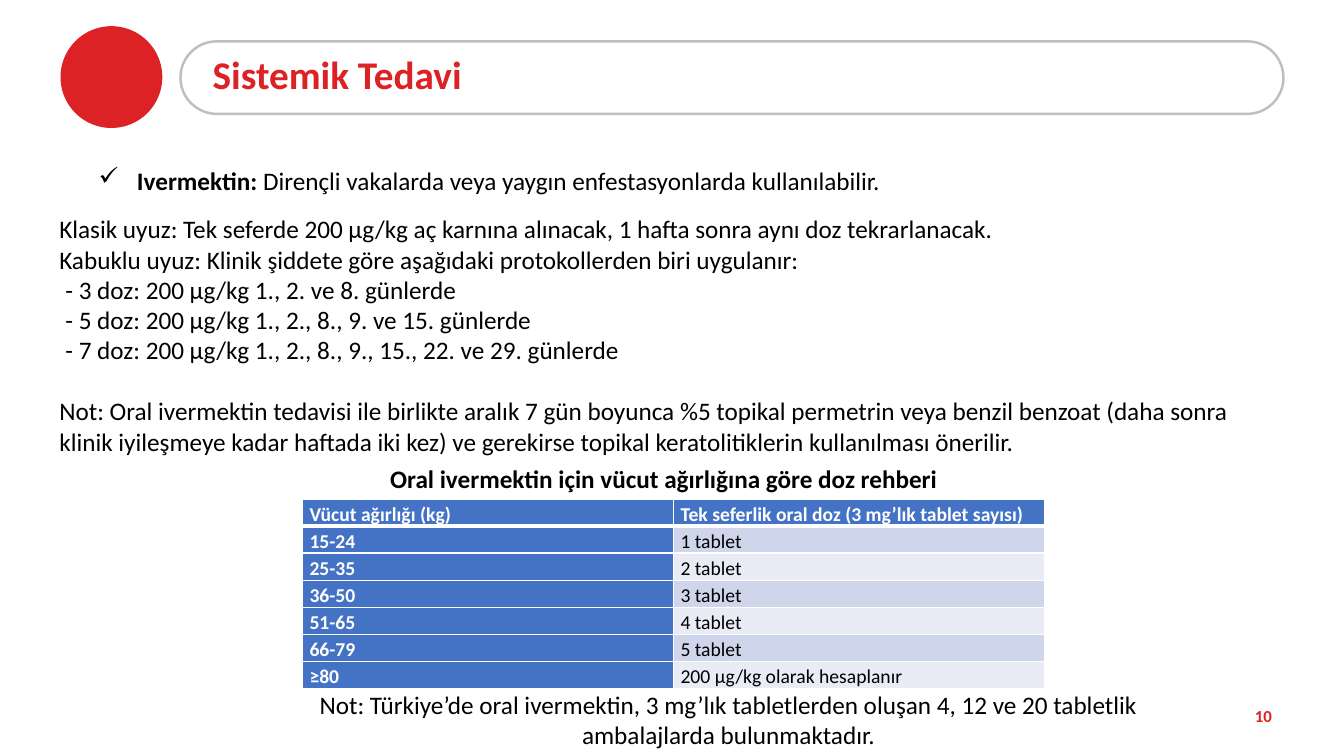
"""Builds the slide on systemic scabies treatment with its ivermectin dose table."""
from dataclasses import dataclass

from lxml import etree
from pptx import Presentation
from pptx.dml.color import RGBColor
from pptx.enum import shapes, text
from pptx.oxml import ns
from pptx.util import Inches, Pt


@dataclass(frozen=True)
class Theme:
    """Holds the font, colours and type sizes."""
    font: str = "Calibri"
    red: str = "DC2225"
    grey: str = "BFBFBF"
    black: str = "000000"
    white: str = "FFFFFF"
    blue: str = "4472C4"
    bands: tuple = ("CFD5EA", "E9EBF5")
    title: int = 28
    body: int = 18
    cell: int = 14
    number: int = 12


THEME = Theme()

REGIMENS = [
    ("Klasik uyuz: Tek seferde 200 µg/kg aç karnına alınacak, 1 hafta sonra aynı doz tekrarlanacak.", 0, 0),
    ("Kabuklu uyuz: Klinik şiddete göre aşağıdaki protokollerden biri uygulanır:", 0, 0),
    ("- 3 doz: 200 µg/kg 1., 2. ve 8. günlerde", 0.06, 0),
    ("- 5 doz: 200 µg/kg 1., 2., 8., 9. ve 15. günlerde", 0.06, 0),
    ("- 7 doz: 200 µg/kg 1., 2., 8., 9., 15., 22. ve 29. günlerde", 0.06, 0),
    ("Not: Oral ivermektin tedavisi ile birlikte aralık 7 gün boyunca %5 topikal permetrin veya "
     "benzil benzoat (daha sonra klinik iyileşmeye kadar haftada iki kez) ve gerekirse topikal "
     "keratolitiklerin kullanılması önerilir.", 0, 22),
]

DOSES = [
    ("Vücut ağırlığı (kg)", "Tek seferlik oral doz (3 mg’lık tablet sayısı)"),
    ("15-24", "1 tablet"),
    ("25-35", "2 tablet"),
    ("36-50", "3 tablet"),
    ("51-65", "4 tablet"),
    ("66-79", "5 tablet"),
    ("≥80", "200 µg/kg olarak hesaplanır"),
]


def rgb(colour):
    """Turns a hex string into a colour."""
    return RGBColor.from_string(colour)


def add_run(paragraph, words, size=THEME.body, colour=THEME.black, bold=False):
    """Adds one formatted run to a paragraph."""
    run = paragraph.add_run()
    run.text = words
    run.font.name = THEME.font
    run.font.size = Pt(size)
    run.font.bold = bold
    run.font.color.rgb = rgb(colour)


def add_frame(slide, left, top, width, height, wrap=True):
    """Adds a text box and returns its text frame."""
    box = slide.shapes.add_textbox(Inches(left), Inches(top), Inches(width), Inches(height))
    box.text_frame.word_wrap = wrap
    return box.text_frame


def add_outline(slide, kind, left, top, width, height):
    """Adds a preset shape without shadow."""
    outline = slide.shapes.add_shape(kind, Inches(left), Inches(top), Inches(width), Inches(height))
    outline.shadow.inherit = False
    return outline


def add_header(slide):
    """Draws the red disc and the rounded frame, and fills the title."""
    disc = add_outline(slide, shapes.MSO_SHAPE.OVAL, 0.6, 0.26, 1.01, 1.01)
    disc.fill.solid()
    disc.fill.fore_color.rgb = rgb(THEME.red)
    disc.line.fill.background()
    pill = add_outline(slide, shapes.MSO_SHAPE.ROUNDED_RECTANGLE, 1.79, 0.41, 10.94, 0.72)
    pill.adjustments[0] = 0.5
    pill.fill.background()
    pill.line.color.rgb = rgb(THEME.grey)
    pill.line.width = Pt(1.75)

    title = slide.shapes.title
    title.left, title.top = Inches(2.01), Inches(0.49)
    title.width, title.height = Inches(10.65), Inches(0.55)
    title.text_frame.vertical_anchor = text.MSO_ANCHOR.MIDDLE
    heading = title.text_frame.paragraphs[0]
    heading.alignment = text.PP_ALIGN.LEFT
    heading.line_spacing = 0.9
    add_run(heading, "Sistemik Tedavi", THEME.title, THEME.red, True)


def add_drug(slide):
    """Adds the check-marked line on ivermectin."""
    drug = add_frame(slide, 0.88, 1.44, 11.58, 0.96).paragraphs[0]
    drug.line_spacing = 1.5
    properties = drug._p.get_or_add_pPr()
    properties.set("marL", str(Inches(0.38)))
    properties.set("indent", str(Inches(-0.38)))
    etree.SubElement(properties, ns.qn("a:buChar")).set("char", "✓")
    add_run(drug, "Ivermektin: ", bold=True)
    add_run(drug, "Dirençli vakalarda veya yaygın enfestasyonlarda kullanılabilir.")


def add_regimens(slide):
    """Adds the dosing regimens and their note."""
    frame = add_frame(slide, 0.49, 1.79, 11.91, 3.06)
    frame.margin_top, frame.margin_bottom = Inches(0.33), 0
    for index, (words, indent, gap) in enumerate(REGIMENS):
        regimen = frame.add_paragraph() if index else frame.paragraphs[0]
        if indent:
            regimen._p.get_or_add_pPr().set("marL", str(Inches(indent)))
        if gap:
            regimen.space_before = Pt(gap)
        add_run(regimen, words)


def add_borders(cell, row):
    """Gives a cell white borders, thicker below the header."""
    properties = cell._tc.get_or_add_tcPr()
    widths = {"L": 1, "R": 1, "T": 3 if row == 1 else 1, "B": 3 if row == 0 else 1}
    for side, width in widths.items():
        border = etree.SubElement(properties, ns.qn(f"a:ln{side}"), w=str(Pt(width)))
        fill = etree.SubElement(border, ns.qn("a:solidFill"))
        etree.SubElement(fill, ns.qn("a:srgbClr"), val=THEME.white)


def add_doses(slide):
    """Adds the table of doses by body weight."""
    table = slide.shapes.add_table(len(DOSES), 2, Inches(3), Inches(4.95),
                                   Inches(7.36), Inches(0.21 * len(DOSES))).table
    for row, values in enumerate(DOSES):
        for column, words in enumerate(values):
            cell = table.cell(row, column)
            heading = row == 0 or column == 0
            cell.margin_left = cell.margin_right = Inches(0.07)
            cell.margin_top = cell.margin_bottom = 0
            add_borders(cell, row)
            cell.fill.solid()
            cell.fill.fore_color.rgb = rgb(THEME.blue if heading else THEME.bands[(row - 1) % 2])
            entry = cell.text_frame.paragraphs[0]
            entry.line_spacing = 1.15
            entry.space_after = Pt(10)
            add_run(entry, words, THEME.cell, THEME.white if heading else THEME.black, heading)


def add_notes(slide):
    """Adds the table caption, the packaging note and the slide number."""
    caption = add_frame(slide, 3.77, 4.55, 5.69, 0.4, wrap=False).paragraphs[0]
    add_run(caption, "Oral ivermektin için vücut ağırlığına göre doz rehberi", bold=True)

    packaging = add_frame(slide, 2.88, 6.79, 8.69, 0.71).paragraphs[0]
    packaging.alignment = text.PP_ALIGN.CENTER
    add_run(packaging, "Not: Türkiye’de oral ivermektin, 3 mg’lık tabletlerden oluşan "
                       "4, 12 ve 20 tabletlik ambalajlarda bulunmaktadır.")

    corner = add_frame(slide, 12.33, 6.7, 0.4, 0.8)
    corner.vertical_anchor = text.MSO_ANCHOR.MIDDLE
    number = corner.paragraphs[0]
    number.alignment = text.PP_ALIGN.CENTER
    add_run(number, "10", THEME.number, THEME.red, True)


def main():
    """Builds and saves the slide."""
    deck = Presentation()
    deck.slide_width, deck.slide_height = Inches(13.33), Inches(7.5)
    slide = deck.slides.add_slide(deck.slide_layouts[5])
    add_header(slide)
    add_drug(slide)
    add_doses(slide)
    add_regimens(slide)
    add_notes(slide)
    deck.save("out.pptx")


if __name__ == "__main__":
    main()
